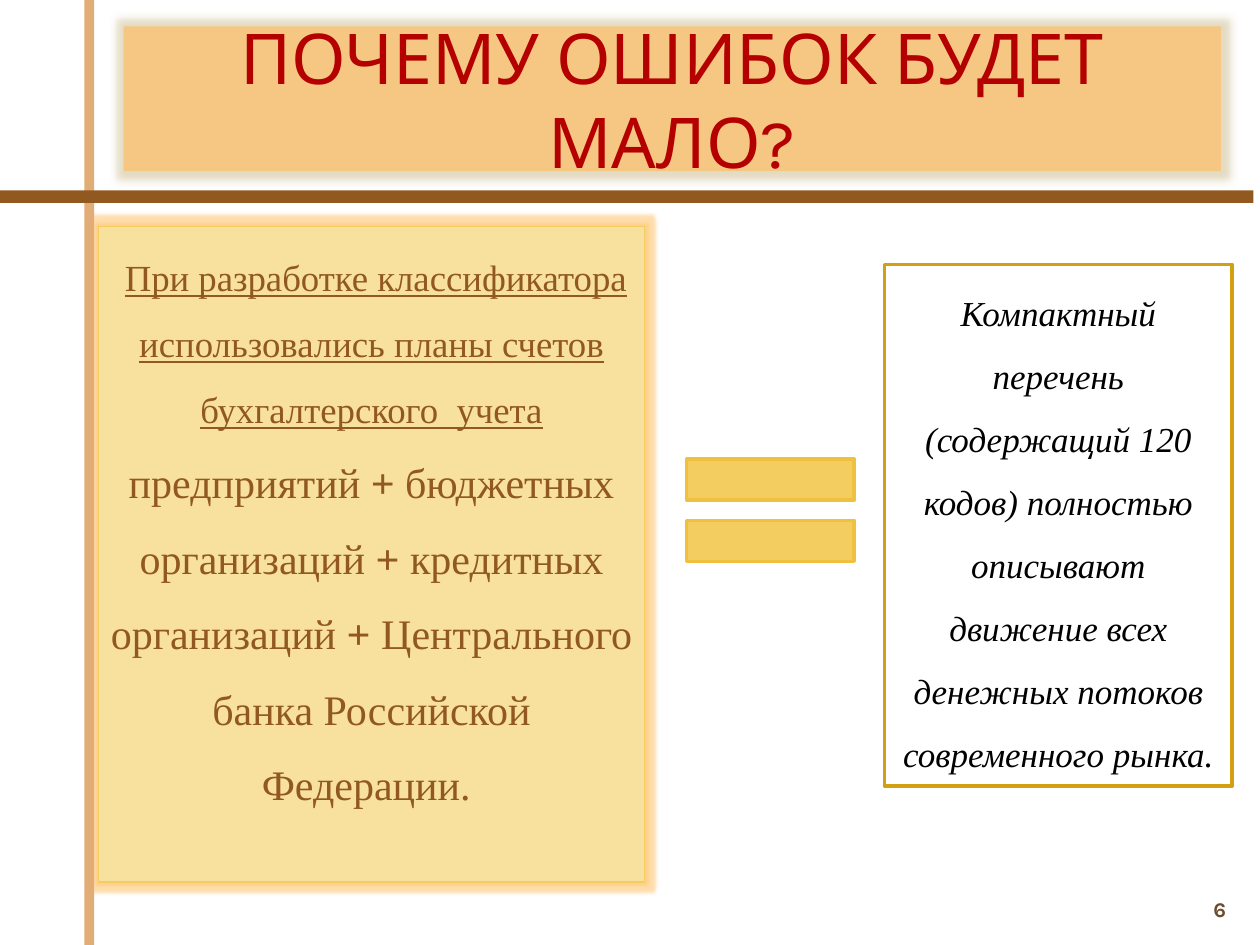
from lxml import etree
from pptx import Presentation
from pptx.dml.color import RGBColor
from pptx.enum.shapes import MSO_SHAPE
from pptx.enum.text import MSO_ANCHOR, MSO_AUTO_SIZE, PP_ALIGN
from pptx.oxml.ns import qn
from pptx.util import Cm, Pt

RECT, EQUAL = MSO_SHAPE.RECTANGLE, MSO_SHAPE.MATH_EQUAL
TOP, MIDDLE = MSO_ANCHOR.TOP, MSO_ANCHOR.MIDDLE
CENTER, RIGHT = PP_ALIGN.CENTER, PP_ALIGN.RIGHT
NO_FIT = MSO_AUTO_SIZE.NONE

SERIF = "Times New Roman"
BROWN, GOLD = "91581F", "F3CD60"
PLAIN = {"name": SERIF, "size": Pt(24), "color": BROWN}
PLUS = {**PLAIN, "bold": True}
LEAD = {**PLAIN, "size": Pt(21), "underline": True}

SOURCES = [
    (" ", {**PLAIN, "size": Pt(20)}),
    ("При разработке классификатора использовались планы счетов "
     "бухгалтерского  учета ", LEAD),
    ("предприятий ", PLAIN),
    ("+", PLUS),
    (" бюджетных организаций ", PLAIN),
    ("+ ", PLUS),
    ("кредитных организаций ", PLAIN),
    ("+ ", PLUS),
    ("Центрального банка Российской Федерации. ", PLAIN),
]
RESULT = [
    ("Компактный перечень (содержащий 120 кодов) полностью описывают "
     "движение всех денежных потоков современного рынка.",
     {"name": SERIF, "size": Pt(20), "color": "000000", "italic": True}),
]


def rgb(code):
    return RGBColor.from_string(code)


def paint(shape, fill=None, line=None, width=2):
    if fill:
        shape.fill.solid()
        shape.fill.fore_color.rgb = rgb(fill)
    else:
        shape.fill.background()
    if line:
        shape.line.color.rgb = rgb(line)
        shape.line.width = Pt(width)
    else:
        shape.line.fill.background()


def add_form(slide, kind, box, **look):
    shape = slide.shapes.add_shape(kind, *map(Cm, box))
    shape.shadow.inherit = False
    paint(shape, **look)
    return shape


def add_glow(shape, code, size, alpha):
    """Put a soft halo around the shape; alpha is in percent."""
    shape.shadow.inherit = False
    effects = shape._element.spPr.find(qn("a:effectLst"))
    glow = etree.SubElement(effects, qn("a:glow"), rad=str(Pt(size)))
    color = etree.SubElement(glow, qn("a:srgbClr"), val=code)
    etree.SubElement(color, qn("a:alpha"), val=str(alpha * 1000))


def write(shape, runs, align=CENTER, anchor=TOP, spacing=None):
    frame = shape.text_frame
    frame.clear()
    form = {"word_wrap": True, "auto_size": NO_FIT, "vertical_anchor": anchor}
    for key, value in form.items():
        setattr(frame, key, value)
    para = frame.paragraphs[0]
    para.alignment = align
    para.line_spacing = spacing
    for text, style in runs:
        run = para.add_run()
        run.text = text
        for key, value in style.items():
            if key == "color":
                run.font.color.rgb = rgb(value)
            else:
                setattr(run.font, key, value)


def set_title(slide):
    title = slide.shapes.title
    place = {"left": 2.49, "top": 0.53, "width": 22.12, "height": 2.92}
    for key, value in place.items():
        setattr(title, key, Cm(value))
    paint(title, "F6C782")
    add_glow(title, "D2C39B", 10, 60)
    style = {"name": "Karla", "size": Pt(40), "color": "B40000"}
    write(title, [("ПОЧЕМУ ОШИБОК БУДЕТ МАЛО?", style)], anchor=MIDDLE)


def add_number(slide):
    box = slide.shapes.add_textbox(Cm(22.86), Cm(17.98), Cm(2.11), Cm(0.69))
    style = {"name": "Karla", "size": Pt(12), "color": "6C4C2C", "bold": True}
    write(box, [("6", style)], RIGHT, MIDDLE)


def main():
    deck = Presentation()
    deck.slide_width, deck.slide_height = Cm(25.4), Cm(19.05)
    slide = deck.slides.add_slide(deck.slide_layouts[5])

    set_title(slide)
    panel = add_form(slide, RECT, (1.98, 4.57, 11.02, 13.21),
                     fill="F8E19F", line=GOLD, width=0.75)
    add_glow(panel, "FFC878", 4, 60)
    panel.text_frame.margin_left = panel.text_frame.margin_right = Cm(0.2)
    write(panel, SOURCES, spacing=1.5)
    add_number(slide)

    add_form(slide, RECT, (1.7, 0, 0.2, 19.05), fill="E2AC76")
    add_form(slide, RECT, (-0.05, 3.84, 25.32, 0.25), fill=BROWN)

    card = add_form(slide, RECT, (17.83, 5.33, 7.01, 10.52), line="D2A010")
    write(card, RESULT, spacing=1.5)
    add_form(slide, EQUAL, (13.23, 8.53, 4.6, 3.51), fill=GOLD, line="F0C13E")

    deck.save("out.pptx")


if __name__ == "__main__":
    main()
